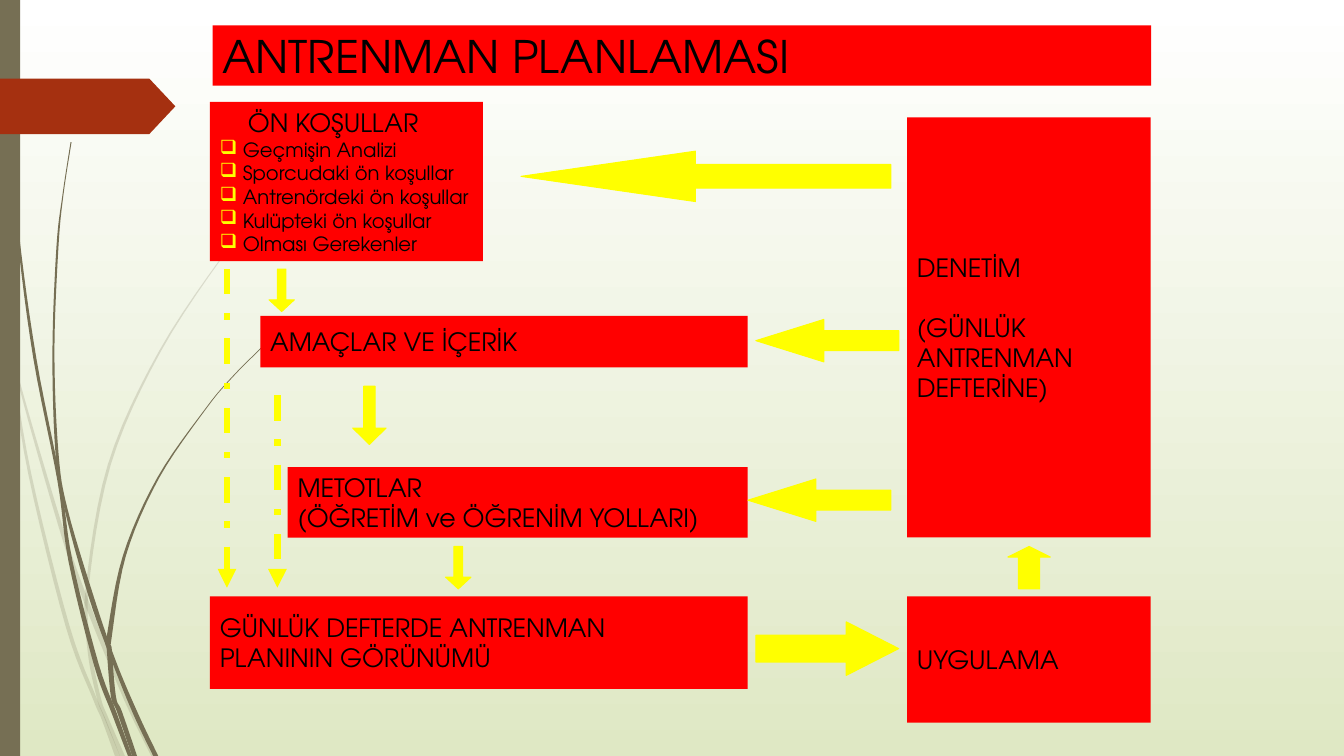
import lxml.etree
import pptx
import pptx.dml.color
import pptx.enum.dml
import pptx.enum.shapes
import pptx.enum.text
import pptx.oxml.ns
import pptx.util

Cm = pptx.util.Cm
Pt = pptx.util.Pt
Kind = pptx.enum.shapes.MSO_SHAPE

THEME = {
    "font": "TeX Gyre Adventor",
    "title": 32, "body": 18, "list": 14,
    "ink": "000000", "box": "FF0000", "arrow": "FFFF00",
    "stem": "766F54", "flag": "A53010",
    "sky": ("FFFFFF", "DFE8C4"),
}

WIDE, HIGH = 33.87, 19.05
TITLE = ("ANTRENMAN PLANLAMASI", (5.36, 0.64, 23.65, 1.52))
NEEDS = ("ÖN KOŞULLAR",
         ["Geçmişin Analizi", "Sporcudaki ön koşullar", "Antrenördeki ön koşullar",
          "Kulüpteki ön koşullar", "Olması Gerekenler"],
         (5.29, 2.57, 6.88, 4.01))
CHECK = (["DENETİM", "(GÜNLÜK", "ANTRENMAN", "DEFTERİNE)"], (22.86, 2.96, 6.14, 10.58))
STEPS = [
    (["AMAÇLAR VE İÇERİK"], (6.56, 7.96, 12.28, 1.3)),
    (["METOTLAR", "(ÖĞRETİM ve ÖĞRENİM YOLLARI)"], (7.25, 11.77, 11.59, 1.78)),
    (["GÜNLÜK DEFTERDE ANTRENMAN", "PLANININ GÖRÜNÜMÜ"], (5.29, 15.03, 13.55, 2.33)),
    (["UYGULAMA"], (22.86, 15.03, 6.14, 3.18)),
]

# kind, place, shaft width, head length
ARROWS = [
    (Kind.LEFT_ARROW, (13.13, 3.81, 9.32, 1.27), (0.47, 3.46)),
    (Kind.LEFT_ARROW, (19.05, 8.05, 3.6, 1.07), (0.47, 1.6)),
    (Kind.LEFT_ARROW, (18.85, 12.07, 3.6, 1.07), (0.47, 1.6)),
    (Kind.RIGHT_ARROW, (19.05, 15.67, 3.6, 1.35), (0.5, 0.98)),
    (Kind.DOWN_ARROW, (6.78, 6.78, 0.64, 1.07), (0.34, 0.46)),
    (Kind.DOWN_ARROW, (8.89, 9.73, 0.84, 1.47), (0.34, 0.49)),
    (Kind.DOWN_ARROW, (11.23, 13.77, 0.64, 1.07), (0.34, 0.46)),
    (Kind.UP_ARROW, (25.4, 13.77, 1.07, 1.07), (0.5, 0.25)),
]
DASHES = [(5.72, 6.78), (6.99, 9.96)]  # x, top
FLOOR = 14.81

# Grass blades: opacity, then (left edge, y, width) in grains
GRAIN = Cm(0.0254)
BLADES = [
    (20, [(0, 282, 1), (9, 350, 2), (28, 470, 3), (65, 621, 4), (92, 693, 4),
          (101, 714, 4), (114, 750, 5)]),
    (20, [(14, 345, 1), (17, 376, 2), (58, 522, 4), (84, 599, 5), (123, 694, 5),
          (150, 750, 5)]),
    (20, [(312, 153, 1), (268, 197, 1), (228, 244, 1), (158, 348, 2), (107, 461, 3),
          (85, 584, 3), (87, 646, 4), (96, 692, 4), (103, 711, 4), (119, 750, 5)]),
    (100, [(3, 0, 1), (4, 48, 1), (7, 110, 1), (17, 233, 2), (33, 355, 3), (57, 477, 3),
           (68, 557, 4), (93, 659, 5), (111, 708, 5), (127, 750, 4)]),
    (100, [(70, 141, 1), (62, 193, 1), (56, 245, 2), (52, 349, 2), (55, 449, 3),
           (64, 505, 3), (88, 592, 5), (111, 656, 4), (132, 708, 5), (152, 750, 5)]),
    (100, [(260, 344, 1), (231, 373, 1), (204, 405, 1), (156, 474, 2), (122, 551, 3),
           (106, 631, 5), (106, 645, 5), (110, 691, 5), (116, 706, 5), (131, 750, 5)]),
]


def tint(name):
    return pptx.dml.color.RGBColor.from_string(name)


def put(thing, **props):
    for name, value in props.items():
        setattr(thing, name, value)


def node(host, tag, **props):
    return lxml.etree.SubElement(host, pptx.oxml.ns.qn(tag), props)


def paint(shape, color, edge=False):
    shape.shadow.inherit = False
    shape.fill.solid()
    shape.fill.fore_color.rgb = tint(color)
    if edge:
        shape.line.color.rgb = tint(color)
        shape.line.width = Pt(0.75)
    else:
        shape.line.fill.background()


def shape(slide, kind, place, color, shares=(), edge=False):
    item = slide.shapes.add_shape(kind, *map(Cm, place))
    for i, share in enumerate(shares):
        item.adjustments[i] = share
    paint(item, color, edge)
    return item


def box(slide, rows, place, size, wrap=False):
    """Draw a red box with one paragraph per row and return the paragraphs."""
    frame = shape(slide, Kind.RECTANGLE, place, THEME["box"]).text_frame
    put(frame, word_wrap=wrap, vertical_anchor=pptx.enum.text.MSO_ANCHOR.MIDDLE)
    for i, row in enumerate(rows):
        para = frame.add_paragraph() if i else frame.paragraphs[0]
        para.alignment = pptx.enum.text.PP_ALIGN.LEFT
        run = para.add_run()
        run.text = row
        put(run.font, name=THEME["font"], size=Pt(size))
        run.font.color.rgb = tint(THEME["ink"])
    return frame.paragraphs


def indent(para, left, first=0):
    props = para._p.get_or_add_pPr()
    props.set("marL", str(Cm(left)))
    props.set("indent", str(Cm(first)))
    return props


def needs(slide):
    head, items, place = NEEDS
    paras = box(slide, [head, *items], place, THEME["body"])
    indent(paras[0], 0.71)
    for para in paras[1:]:
        para.runs[0].font.size = Pt(THEME["list"])
        props = indent(para, 0.58, -0.58)
        node(node(props, "a:buClr"), "a:srgbClr", val=THEME["arrow"])
        node(props, "a:buChar", char="❑")


def curve(knots, steps=6):
    """Sample a smooth Catmull-Rom curve through the knots."""
    ends = [knots[0], *knots, knots[-1]]
    for four in zip(ends, ends[1:], ends[2:], ends[3:]):
        for t in (i / steps for i in range(steps)):
            yield [b + t * (c - a) / 2 + t * t * (a - 2.5 * b + 2 * c - d / 2)
                   + t ** 3 * (3 * b - 3 * c + d - a) / 2
                   for a, b, c, d in zip(*four)]
    yield knots[-1]


def blade(slide, share, knots):
    rows = list(curve(knots))
    rim = [(x, y) for x, y, w in rows] + [(x + w, y) for x, y, w in reversed(rows)]
    dots = [(round(x * GRAIN), round(y * GRAIN)) for x, y in rim]
    pen = slide.shapes.build_freeform(*dots[0])
    pen.add_line_segments(dots[1:], close=True)
    item = pen.convert_to_shape()
    paint(item, THEME["stem"])
    if share < 100:
        color = item.fill._xPr.find(".//" + pptx.oxml.ns.qn("a:srgbClr"))
        node(color, "a:alpha", val=str(share * 1000))


def dash(slide, x, top):
    link = slide.shapes.add_connector(pptx.enum.shapes.MSO_CONNECTOR.STRAIGHT,
                                      Cm(x), Cm(top), Cm(x), Cm(FLOOR))
    link.line.color.rgb = tint(THEME["arrow"])
    put(link.line, width=Pt(4.5), dash_style=pptx.enum.dml.MSO_LINE.DASH_DOT)
    node(link.line._get_or_add_ln(), "a:tailEnd", type="triangle")
    node(link._element.spPr, "a:effectLst")


def main():
    deck = pptx.Presentation()
    put(deck, slide_width=Cm(WIDE), slide_height=Cm(HIGH))
    slide = deck.slides.add_slide(deck.slide_layouts[6])
    sky = slide.background.fill
    sky.gradient()
    sky.gradient_angle = 270
    for stop, color in zip(sky.gradient_stops, THEME["sky"]):
        stop.color.rgb = tint(color)

    for share, knots in BLADES:
        blade(slide, share, knots)
    shape(slide, Kind.RECTANGLE, (0, 0, 0.51, HIGH), THEME["stem"])
    shape(slide, Kind.PENTAGON, (0, 1.98, 4.42, 1.4), THEME["flag"], [0.47])

    box(slide, [TITLE[0]], TITLE[1], THEME["title"])
    needs(slide)
    box(slide, *CHECK, THEME["body"])[1].space_before = Pt(21.5)
    for rows, place in STEPS:
        box(slide, rows, place, THEME["body"])

    for kind, place, shares in ARROWS:
        shape(slide, kind, place, THEME["arrow"], shares, edge=True)
    for x, top in DASHES:
        dash(slide, x, top)
    deck.save("out.pptx")


if __name__ == "__main__":
    main()
